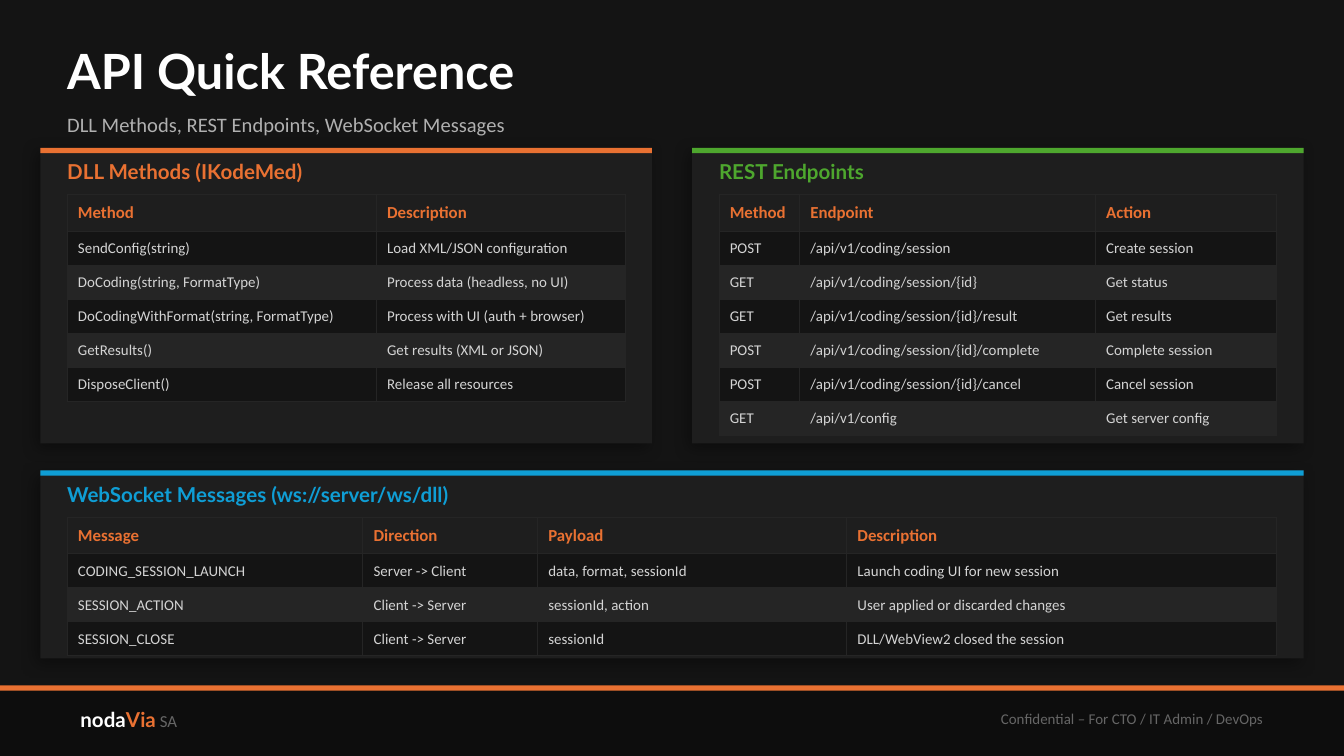
from dataclasses import dataclass

from pptx import Presentation
from pptx.dml.color import RGBColor
from pptx.enum.shapes import MSO_SHAPE as Shape
from pptx.enum.text import MSO_ANCHOR as Anchor, MSO_AUTO_SIZE as AutoSize, PP_ALIGN as Align
from pptx.oxml import parse_xml
from pptx.oxml.ns import nsdecls, qn
from pptx.util import Pt

PX = 4572  # EMU per px: 200 px to the inch


@dataclass(frozen=True)
class Theme:
    background: str = "141414"
    footer: str = "0D0D0D"
    card: str = "1E1E1E"
    stripe: str = "252525"
    white: str = "FFFFFF"
    subtitle: str = "B0B0B0"
    cell: str = "D4D4D4"
    muted: str = "666666"
    orange: str = "E97132"
    green: str = "4EA72E"
    blue: str = "0F9ED5"
    heading_font: str = "Lato"
    body_font: str = "Calibri"
    title_size: int = 26
    heading_size: int = 11
    small_size: int = 9
    tiny_size: int = 8


theme = Theme()


def add_bar(left, top, width, height, color):
    bar = slide.shapes.add_shape(Shape.RECTANGLE, left * PX, top * PX, width * PX, height * PX)
    bar.shadow.inherit = False
    bar.fill.solid()
    bar.fill.fore_color.rgb = RGBColor.from_string(color)
    bar.line.fill.background()
    return bar


def write(text_frame, runs, align=Align.LEFT, margins=(0, 0)):
    """Fill a frame with (text, font, size, color, bold) runs; margins are side and top/bottom px."""
    text_frame.word_wrap = True
    text_frame.vertical_anchor = Anchor.MIDDLE
    text_frame.margin_left = text_frame.margin_right = margins[0] * PX
    text_frame.margin_top = text_frame.margin_bottom = margins[1] * PX
    paragraph = text_frame.paragraphs[0]
    paragraph.alignment = align
    for text, font, size, color, bold in runs:
        run = paragraph.add_run()
        run.text = text
        run.font.name = font
        run.font.size = Pt(size)
        run.font.bold = bold
        run.font.color.rgb = RGBColor.from_string(color)


presentation = Presentation()
presentation.slide_width = 2000 * PX
presentation.slide_height = 1125 * PX
slide = presentation.slides.add_slide(presentation.slide_layouts[5])
slide.background.fill.solid()
slide.background.fill.fore_color.rgb = RGBColor.from_string(theme.background)

# Title and subtitle
title = slide.shapes.title
title.left, title.top, title.width, title.height = 100 * PX, 50 * PX, 1800 * PX, 110 * PX
title.text_frame.auto_size = AutoSize.NONE
write(title.text_frame,
      [("API Quick Reference", theme.heading_font, theme.title_size, theme.white, True)])
subtitle = slide.shapes.add_textbox(100 * PX, 150 * PX, 1800 * PX, 70 * PX)
write(subtitle.text_frame, [("DLL Methods, REST Endpoints, WebSocket Messages",
                             theme.body_font, theme.heading_size, theme.subtitle, False)])

# Footer
add_bar(0, 1020, 2000, 105, theme.footer)
add_bar(0, 1020, 2000, 8, theme.orange)
company = slide.shapes.add_textbox(100 * PX, 1030 * PX, 600 * PX, 80 * PX)
write(company.text_frame, [
    ("noda", theme.heading_font, theme.heading_size, theme.white, True),
    ("Via", theme.heading_font, theme.heading_size, theme.orange, True),
    (" SA", theme.body_font, theme.small_size, theme.muted, False),
], margins=(20, 10))
audience = slide.shapes.add_textbox(1100 * PX, 1030 * PX, 800 * PX, 80 * PX)
write(audience.text_frame, [("Confidential – For CTO / IT Admin / DevOps",
                             theme.body_font, theme.tiny_size, theme.muted, False)],
      Align.RIGHT, (20, 10))

# Cards: heading, accent, (left, top, width, height), column widths, rows
cards = [
    ("DLL Methods (IKodeMed)", theme.orange, (60, 220, 910, 440), (460, 370), [
        ("Method", "Description"),
        ("SendConfig(string)", "Load XML/JSON configuration"),
        ("DoCoding(string, FormatType)", "Process data (headless, no UI)"),
        ("DoCodingWithFormat(string, FormatType)", "Process with UI (auth + browser)"),
        ("GetResults()", "Get results (XML or JSON)"),
        ("DisposeClient()", "Release all resources"),
    ]),
    ("REST Endpoints", theme.green, (1030, 220, 910, 440), (120, 440, 270), [
        ("Method", "Endpoint", "Action"),
        ("POST", "/api/v1/coding/session", "Create session"),
        ("GET", "/api/v1/coding/session/{id}", "Get status"),
        ("GET", "/api/v1/coding/session/{id}/result", "Get results"),
        ("POST", "/api/v1/coding/session/{id}/complete", "Complete session"),
        ("POST", "/api/v1/coding/session/{id}/cancel", "Cancel session"),
        ("GET", "/api/v1/config", "Get server config"),
    ]),
    ("WebSocket Messages (ws://server/ws/dll)", theme.blue, (60, 700, 1880, 280),
     (440, 260, 460, 640), [
        ("Message", "Direction", "Payload", "Description"),
        ("CODING_SESSION_LAUNCH", "Server -> Client", "data, format, sessionId",
         "Launch coding UI for new session"),
        ("SESSION_ACTION", "Client -> Server", "sessionId, action",
         "User applied or discarded changes"),
        ("SESSION_CLOSE", "Client -> Server", "sessionId", "DLL/WebView2 closed the session"),
    ]),
]

for heading, accent, (left, top, width, height), column_widths, rows in cards:
    card = add_bar(left, top, width, height, theme.card)
    card._element.spPr.find(qn("a:effectLst")).append(parse_xml(
        f'<a:outerShdw {nsdecls("a")} blurRad="{Pt(8)}" dist="{Pt(3)}" dir="8100000" '
        'algn="bl" rotWithShape="0"><a:srgbClr val="000000"><a:alpha val="35000"/>'
        '</a:srgbClr></a:outerShdw>'))
    add_bar(left, top, width, 8, accent)

    inner_left, inner_width = left + 40, width - 80
    label = slide.shapes.add_textbox(inner_left * PX, (top + 10) * PX, inner_width * PX, 50 * PX)
    write(label.text_frame, [(heading, theme.heading_font, theme.heading_size, accent, True)])

    row_heights = [54] + [49] * (len(rows) - 1)
    table = slide.shapes.add_table(len(rows), len(column_widths), inner_left * PX, (top + 70) * PX,
                                   inner_width * PX, sum(row_heights) * PX).table
    for column, column_width in zip(table.columns, column_widths):
        column.width = column_width * PX
    for row_index, row in enumerate(rows):
        table.rows[row_index].height = row_heights[row_index] * PX
        if row_index == 0:
            fill, size, color = theme.card, theme.small_size, theme.orange
        else:
            fill = theme.background if row_index % 2 else theme.stripe
            size, color = theme.tiny_size, theme.cell
        for column_index, text in enumerate(row):
            cell = table.cell(row_index, column_index)
            cell.fill.solid()
            cell.fill.fore_color.rgb = RGBColor.from_string(fill)
            write(cell.text_frame, [(text, theme.body_font, size, color, row_index == 0)])
            cell.vertical_anchor = Anchor.MIDDLE
            cell.margin_left = cell.margin_right = 16 * PX
            cell.margin_top = cell.margin_bottom = 12 * PX
            properties = cell._tc.get_or_add_tcPr()
            for position, side in enumerate(("lnL", "lnR", "lnT", "lnB")):
                properties.insert(position, parse_xml(
                    f'<a:{side} {nsdecls("a")} w="{Pt(0.5)}"><a:solidFill>'
                    f'<a:srgbClr val="{theme.stripe}"/></a:solidFill></a:{side}>'))

presentation.save("out.pptx")
